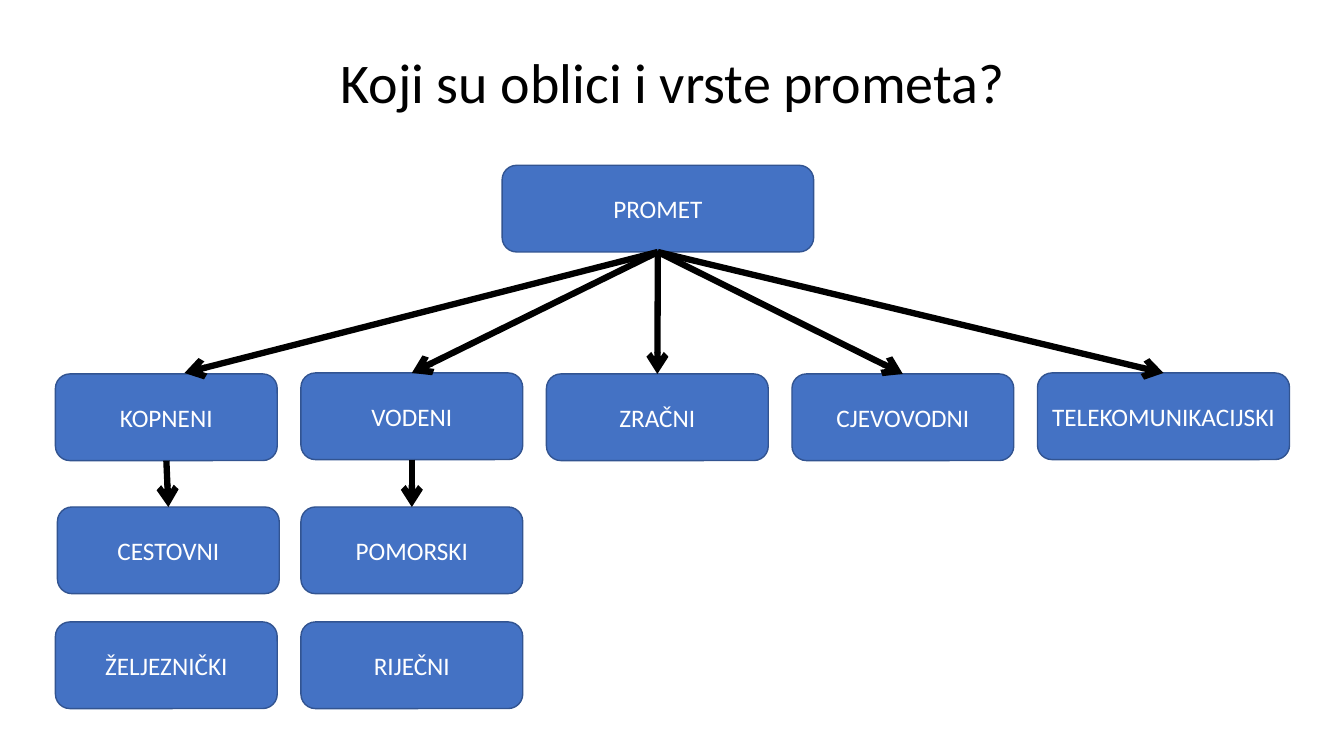
"""Build a slide with a tree diagram of the forms and kinds of transport."""
import pptx
import pptx.dml.color
import pptx.enum.shapes
import pptx.enum.text
import pptx.oxml
import pptx.oxml.ns
import pptx.util
from pptx.util import Inches

BLUE = pptx.dml.color.RGBColor(0x44, 0x72, 0xC4)
DARK_BLUE = pptx.dml.color.RGBColor(0x32, 0x54, 0x91)
WHITE = pptx.dml.color.RGBColor(0xFF, 0xFF, 0xFF)
BLACK = pptx.dml.color.RGBColor(0x00, 0x00, 0x00)
FONT = "Calibri"
BOX_WIDTH = 2.2
BOX_HEIGHT = 0.86
COLUMN_LEFT = 0.55
COLUMN_STEP = 2.435
BOTTOM_SITE = 2
TOP_SITE = 0

presentation = pptx.Presentation()
presentation.slide_width = Inches(13.33)
presentation.slide_height = Inches(7.5)
slide = presentation.slides.add_slide(presentation.slide_layouts[5])


def write(shape, text, size, color):
    shape.text_frame.text = text
    shape.text_frame.word_wrap = True
    shape.text_frame.vertical_anchor = pptx.enum.text.MSO_ANCHOR.MIDDLE
    paragraph = shape.text_frame.paragraphs[0]
    paragraph.alignment = pptx.enum.text.PP_ALIGN.CENTER
    font = paragraph.runs[0].font
    font.name = FONT
    font.size = pptx.util.Pt(size)
    font.color.rgb = color


def add_box(text, left, top, width=BOX_WIDTH):
    shape = slide.shapes.add_shape(
        pptx.enum.shapes.MSO_SHAPE.ROUNDED_RECTANGLE,
        Inches(left), Inches(top), Inches(width), Inches(BOX_HEIGHT))
    shape.shadow.inherit = False
    shape.fill.solid()
    shape.fill.fore_color.rgb = BLUE
    shape.line.color.rgb = DARK_BLUE
    shape.line.width = pptx.util.Pt(1)
    write(shape, text, 18, WHITE)
    return shape


title = slide.shapes.title
title.left, title.top = Inches(0.46), Inches(0.4)
title.width, title.height = Inches(12.42), Inches(0.89)
write(title, "Koji su oblici i vrste prometa?", 40, BLACK)
title.text_frame.paragraphs[0].line_spacing = 0.9

root = add_box("PROMET", 4.98, 1.64, 3.09)
forms = [
    add_box(text, COLUMN_LEFT + column * COLUMN_STEP, top, width)
    for column, (text, top, width) in enumerate([
        ("KOPNENI", 3.71, BOX_WIDTH),
        ("VODENI", 3.7, BOX_WIDTH),
        ("ZRAČNI", 3.71, BOX_WIDTH),
        ("CJEVOVODNI", 3.71, BOX_WIDTH),
        ("TELEKOMUNIKACIJSKI", 3.7, 2.5),
    ])
]
road = add_box("CESTOVNI", 0.57, 5.03)
add_box("ŽELJEZNIČKI", COLUMN_LEFT, 6.17)
sea = add_box("POMORSKI", COLUMN_LEFT + COLUMN_STEP, 5.03)
add_box("RIJEČNI", COLUMN_LEFT + COLUMN_STEP, 6.17)

links = [(root, form) for form in forms] + [(forms[0], road), (forms[1], sea)]
for parent, child in links:
    arrow = slide.shapes.add_connector(
        pptx.enum.shapes.MSO_CONNECTOR.STRAIGHT,
        Inches(6.52), Inches(2.5), Inches(1.83), Inches(3.7))
    arrow.begin_connect(parent, BOTTOM_SITE)
    if child is not forms[0]:
        arrow.end_connect(child, TOP_SITE)
    arrow.line.color.rgb = BLACK
    arrow.line.width = pptx.util.Pt(4.5)
    tail = pptx.oxml.parse_xml(
        f'<a:tailEnd {pptx.oxml.ns.nsdecls("a")} type="arrow"/>')
    arrow.line._get_or_add_ln().append(tail)
    effects = pptx.oxml.parse_xml(f'<a:effectLst {pptx.oxml.ns.nsdecls("a")}/>')
    arrow._element.spPr.append(effects)

presentation.save("out.pptx")
